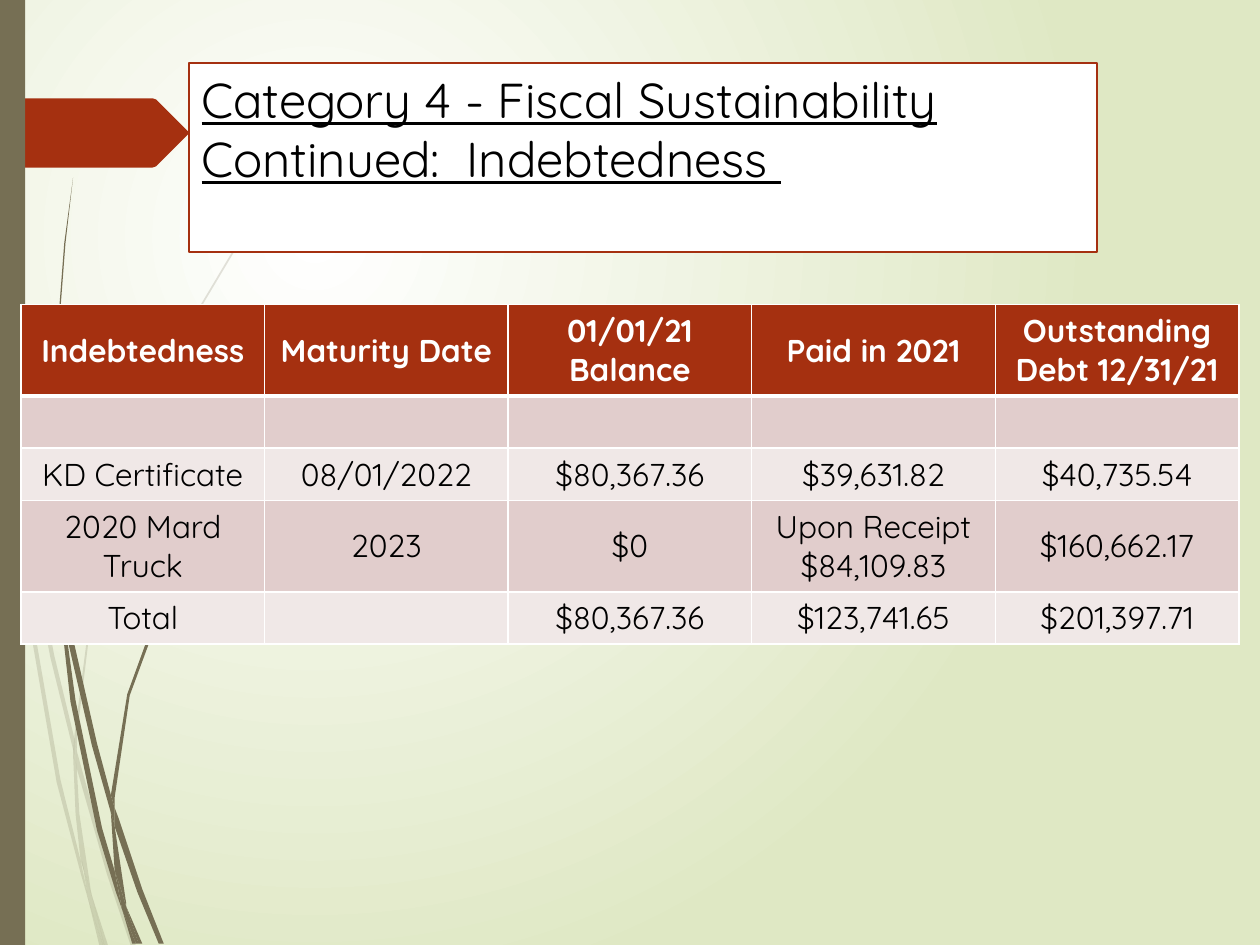
"""Build the fiscal sustainability slide with its indebtedness table."""
import pptx
import pptx.dml.color
import pptx.enum.dml
import pptx.enum.shapes
import pptx.enum.text
import pptx.oxml
import pptx.oxml.ns
import pptx.util
import lxml.etree

Pt = pptx.util.Pt
RGBColor = pptx.dml.color.RGBColor
qn = pptx.oxml.ns.qn

WHITE = RGBColor(0xFF, 0xFF, 0xFF)
BLACK = RGBColor(0x00, 0x00, 0x00)
PALE_GREEN = RGBColor(0xDF, 0xE8, 0xC4)
BROWN = RGBColor(0x76, 0x6F, 0x54)
RUST = RGBColor(0xA5, 0x30, 0x10)
DARK_BAND = RGBColor(0xE1, 0xCD, 0xCC)
LIGHT_BAND = RGBColor(0xF0, 0xE8, 0xE7)
OUTLINE_UNIT = Pt(0.72)

PALE_STRANDS = [
    [(8, 350), (6, 322), (0, 282), (0, 299), (7, 344)],
    [(40, 522), (59, 599), (59, 586), (43, 520), (10, 345), (12, 376)],
    [(64, 607), (61, 596), (61, 610), (85, 694), (104, 751), (108, 751), (88, 692)],
    [(83, 751), (86, 751), (73, 711)],
    [(64, 683), (48, 619), (22, 469), (12, 376), (8, 350), (19, 470), (45, 621),
     (64, 693), (70, 714), (69, 707)],
    [(58, 599), (60, 646), (64, 683), (67, 692), (73, 711), (72, 706), (63, 646),
     (61, 610), (61, 608)],
    [(61, 584), (76, 462), (111, 349), (159, 245), (187, 198), (201, 175), (217, 154),
     (217, 153), (201, 175), (186, 197), (158, 244), (110, 348), (75, 461), (59, 584),
     (59, 586), (61, 596)],
    [(70, 714), (79, 751), (82, 751)],
    [(61, 608), (61, 610), (61, 596), (59, 586), (58, 599)],
    [(67, 692), (65, 683), (69, 707), (70, 714), (82, 751), (83, 751), (73, 711)],
]
DARK_STRANDS = [
    [(5, 110), (14, 233), (27, 355), (46, 477), (47, 481), (45, 457), (45, 453),
     (30, 355), (15, 232), (6, 109), (4, 48), (3, 0), (2, 0), (3, 48)],
    [(73, 592), (88, 645), (88, 633), (88, 631), (77, 590), (50, 472), (53, 505)],
    [(94, 649), (91, 641), (91, 656), (109, 708), (126, 749), (130, 749), (113, 706)],
    [(91, 691), (81, 657), (60, 556), (53, 505), (47, 477), (56, 557), (77, 659),
     (92, 708), (97, 722), (96, 717)],
    [(50, 472), (48, 453), (44, 349), (48, 245), (52, 193), (58, 141), (51, 193),
     (47, 245), (43, 349), (45, 449), (49, 472)],
    [(110, 749), (113, 749), (100, 719)],
    [(47, 477), (53, 505), (50, 472), (49, 472), (45, 449), (45, 453)],
    [(91, 633), (103, 552), (131, 476), (169, 406), (191, 374), (203, 359), (216, 344),
     (215, 344), (203, 358), (191, 373), (168, 405), (129, 474), (101, 551), (88, 631),
     (91, 641)],
    [(97, 722), (105, 749), (108, 749)],
    [(88, 645), (91, 691), (96, 706), (100, 719), (100, 716), (91, 656), (90, 651)],
    [(88, 645), (90, 651), (91, 656), (91, 641), (88, 631), (88, 633)],
    [(96, 706), (91, 691), (96, 717), (97, 722), (108, 749), (110, 749), (100, 719)],
]
ARROW = [(149, 107), (124, 132), (121, 133), (0, 133), (0, 78), (121, 78), (124, 79),
         (149, 104), (150, 105.5)]
TABLE_ROWS = [
    ["Indebtedness", "Maturity Date", "01/01/21 Balance", "Paid in 2021",
     "Outstanding Debt 12/31/21"],
    ["", "", "", "", ""],
    ["KD Certificate", "08/01/2022", "$80,367.36", "$39,631.82", "$40,735.54"],
    ["2020 Mard Truck", "2023", "$0", "Upon Receipt $84,109.83", "$160,662.17"],
    ["Total", "", "$80,367.36", "$123,741.65", "$201,397.71"],
]
ROW_HEIGHTS = [52, 29.5, 29.5, 52, 29.5]


def style(target, values):
    """Set each named attribute on the target."""
    for name, value in values.items():
        setattr(target, name, value)


def paint(shape, color):
    """Give a shape a plain fill without line or shadow."""
    shape.shadow.inherit = False
    shape.fill.solid()
    shape.fill.fore_color.rgb = color
    shape.line.fill.background()


presentation = pptx.Presentation()
style(presentation, {"slide_width": Pt(720), "slide_height": Pt(540)})
slide = presentation.slides.add_slide(presentation.slide_layouts[5])

background = slide.background.fill
background.gradient()
for stop, color in zip(background.gradient_stops, (WHITE, PALE_GREEN)):
    stop.color.rgb = color
gradient = slide._element.find(".//" + qn("a:gradFill"))
gradient.remove(gradient.find(qn("a:lin")))
circle = lxml.etree.SubElement(gradient, qn("a:path"), {"path": "circle"})
lxml.etree.SubElement(circle, qn("a:fillToRect"),
                      {"l": "50000", "t": "50000", "r": "100000", "b": "100000"})

outlines = [(points, BROWN, 20) for points in PALE_STRANDS]
outlines += [(points, BROWN, 100) for points in DARK_STRANDS]
outlines.append((ARROW, RUST, 100))
for points, color, opacity in outlines:
    builder = slide.shapes.build_freeform(*points[0], scale=OUTLINE_UNIT)
    builder.add_line_segments(points[1:], close=True)
    shape = builder.convert_to_shape()
    paint(shape, color)
    if opacity < 100:
        color_element = shape._element.spPr.find(".//" + qn("a:srgbClr"))
        lxml.etree.SubElement(color_element, qn("a:alpha"), {"val": str(opacity * 1000)})

side_bar = slide.shapes.add_shape(pptx.enum.shapes.MSO_SHAPE.RECTANGLE,
                                  Pt(0), Pt(0), Pt(14.4), Pt(540))
paint(side_bar, BROWN)

title = slide.shapes.title
style(title, {"left": Pt(108), "top": Pt(36), "width": Pt(519), "height": Pt(108)})
title.fill.solid()
title.fill.fore_color.rgb = WHITE
title.line.color.rgb = RUST
title.line.width = Pt(1.25)
style(title.text_frame, {
    "text": "Category 4 - Fiscal Sustainability Continued:  Indebtedness ",
    "word_wrap": True,
    "auto_size": pptx.enum.text.MSO_AUTO_SIZE.NONE,
    "vertical_anchor": pptx.enum.text.MSO_ANCHOR.TOP,
})
paragraph = title.text_frame.paragraphs[0]
paragraph.alignment = pptx.enum.text.PP_ALIGN.LEFT
title_font = paragraph.runs[0].font
style(title_font, {"name": "Quicksand", "size": Pt(28), "underline": True})
title_font.color.rgb = BLACK
slide.shapes._spTree.append(title._element)

table = slide.shapes.add_table(5, 5, Pt(12), Pt(174), Pt(696), Pt(sum(ROW_HEIGHTS))).table
for column in table.columns:
    column.width = Pt(139.2)
for row_index, texts in enumerate(TABLE_ROWS):
    table.rows[row_index].height = Pt(ROW_HEIGHTS[row_index])
    is_header = row_index == 0
    band = RUST if is_header else DARK_BAND if row_index % 2 else LIGHT_BAND
    border_widths = {"L": 1, "R": 1, "T": 3 if row_index == 1 else 1, "B": 3 if is_header else 1}
    for column_index, text in enumerate(texts):
        cell = table.cell(row_index, column_index)
        style(cell, {"text": text, "vertical_anchor": pptx.enum.text.MSO_ANCHOR.MIDDLE})
        cell.fill.solid()
        cell.fill.fore_color.rgb = band
        paragraph = cell.text_frame.paragraphs[0]
        paragraph.alignment = pptx.enum.text.PP_ALIGN.CENTER
        font = paragraph.runs[0].font if text else paragraph.font
        style(font, {"name": "Quicksand", "size": Pt(18), "bold": is_header})
        font.color.rgb = WHITE if is_header else BLACK
        properties = cell._tc.get_or_add_tcPr()
        for position, (side, width) in enumerate(border_widths.items()):
            border = lxml.etree.Element(qn("a:ln" + side), {"w": str(Pt(width))})
            solid = lxml.etree.SubElement(border, qn("a:solidFill"))
            lxml.etree.SubElement(solid, qn("a:srgbClr"), {"val": str(WHITE)})
            properties.insert(position, border)

presentation.save("out.pptx")
